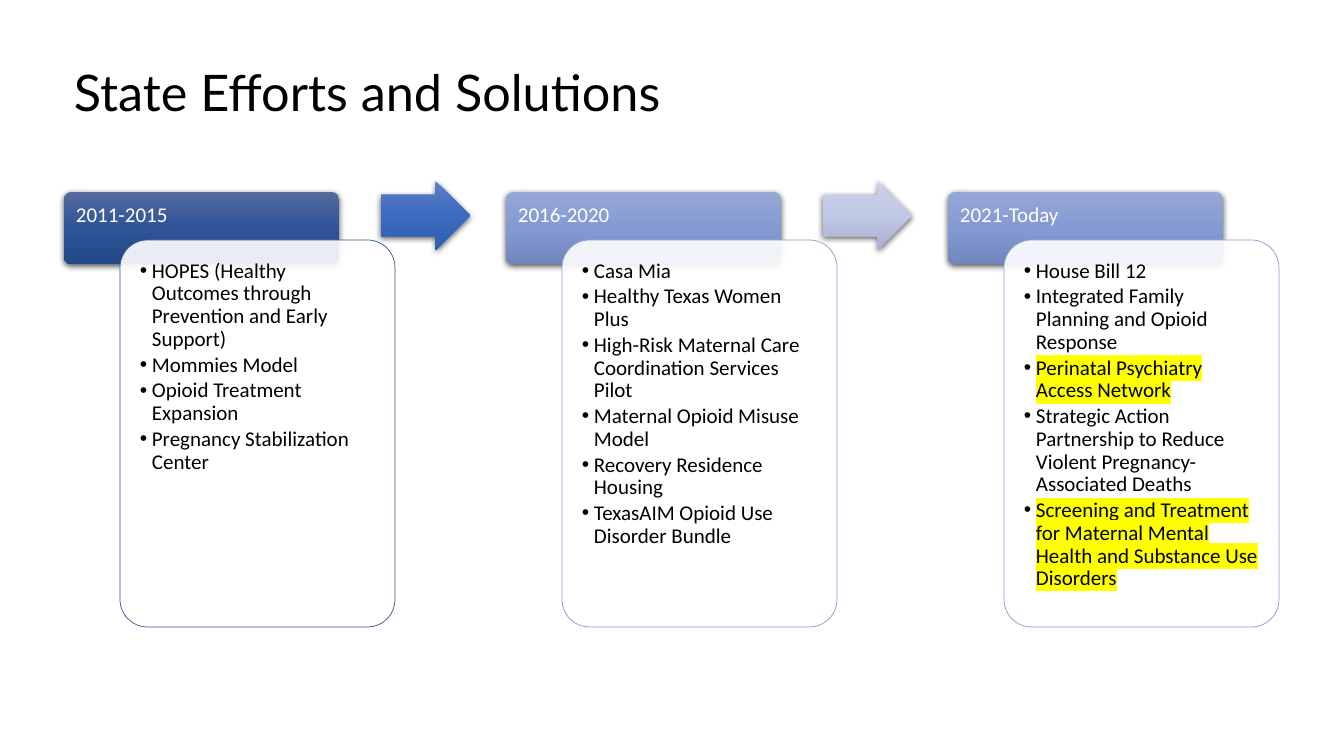
from dataclasses import dataclass

from lxml.etree import SubElement
from pptx import Presentation
from pptx.dml.color import RGBColor
from pptx.enum.shapes import MSO_SHAPE as Shape
from pptx.enum.text import MSO_ANCHOR as Anchor
from pptx.oxml.ns import qn
from pptx.util import Pt

TITLE = "State Efforts and Solutions"
# Each period: heading, then (programme, highlighted) pairs.
PERIODS = [
    ("2011-2015", [
        ("HOPES (Healthy Outcomes through Prevention and Early Support)", False),
        ("Mommies Model", False),
        ("Opioid Treatment Expansion", False),
        ("Pregnancy Stabilization Center", False),
    ]),
    ("2016-2020", [
        ("Casa Mia", False),
        ("Healthy Texas Women Plus", False),
        ("High-Risk Maternal Care Coordination Services Pilot", False),
        ("Maternal Opioid Misuse Model", False),
        ("Recovery Residence Housing", False),
        ("TexasAIM Opioid Use Disorder Bundle", False),
    ]),
    ("2021-Today", [
        ("House Bill 12", False),
        ("Integrated Family Planning and Opioid Response", False),
        ("Perinatal Psychiatry Access Network", True),
        ("Strategic Action Partnership to Reduce Violent Pregnancy-Associated Deaths", False),
        ("Screening and Treatment for Maternal Mental Health and Substance Use Disorders", True),
    ]),
]


@dataclass(frozen=True)
class Theme:
    title_font: str = "Lato"
    body_font: str = "Calibri"
    title_size: int = 36
    body_size: int = 15
    text: str = "000000"
    white: str = "FFFFFF"
    highlight: str = "FFFF00"
    shadow: str = "000000"
    light_header: tuple = ("95A7D4", "849AD2", "7187BE")
    dark_header: tuple = ("566B9E", "2E5396", "244989")
    arrows: tuple = (("5E7EC4", "3B6BC1", "2F5EB1"), ("CAD2E9", "BFC9E6", "A7B1CF"))
    dark_outline: str = "325491"
    light_outline: str = "879BCE"


THEME = Theme()
EMU_PER_PX = 9071.43
SLIDE_SIZE = (1344, 756)
TITLE_BOX = (64, 48, 1218, 95)
LEFT, PITCH, WIDTH = 64, 442, 275
HEADER_TOP, HEADER_HEIGHT, HEADER_TEXT_HEIGHT = 192, 72, 47
CARD_SHIFT, CARD_TOP, CARD_HEIGHT, CARD_PAD = 56, 240, 387, 8
ARROW_SHIFT, ARROW_TOP, ARROW_WIDTH, ARROW_HEIGHT = 317, 181, 89, 69
INSET = 12


def px(value):
    return round(value * EMU_PER_PX)


def add_color(parent, color, alpha=None):
    node = SubElement(parent, qn("a:srgbClr"), val=color)
    if alpha is not None:
        SubElement(node, qn("a:alpha"), val=str(alpha * 1000))


def add_text(slide, box, items, *, font, size, color, insets, anchor=Anchor.TOP,
             bullet=False, space_after=0):
    """Add a text box; items are (text, highlighted) pairs, one per paragraph."""
    frame = slide.shapes.add_textbox(*map(px, box)).text_frame
    frame.word_wrap = True
    frame.vertical_anchor = anchor
    (frame.margin_left, frame.margin_top,
     frame.margin_right, frame.margin_bottom) = map(px, insets)
    for index, (text, highlighted) in enumerate(items):
        paragraph = frame.paragraphs[0] if index == 0 else frame.add_paragraph()
        paragraph.line_spacing = 0.9
        paragraph.space_after = Pt(space_after)
        if bullet:
            properties = paragraph._p.get_or_add_pPr()
            properties.set("marL", str(px(INSET)))
            properties.set("indent", str(-px(INSET)))
            SubElement(properties, qn("a:buFont"), typeface="Arial")
            SubElement(properties, qn("a:buChar"), char="•")
        run = paragraph.add_run()
        run.text = text
        run.font.name = font
        run.font.size = Pt(size)
        run.font.color.rgb = RGBColor.from_string(color)
        if highlighted:
            run_properties = run._r.get_or_add_rPr()
            mark = SubElement(run_properties, qn("a:highlight"))
            add_color(mark, THEME.highlight)
            run_properties.find(qn("a:solidFill")).addnext(mark)


def add_shape(slide, kind, box, adjustments):
    shape = slide.shapes.add_shape(kind, *map(px, box))
    shape.shadow.inherit = False
    for index, value in enumerate(adjustments):
        shape.adjustments[index] = value
    return shape


def add_glossy_shape(slide, kind, box, adjustments, colors):
    """Add a borderless shape with a downward three-colour gradient and a shadow."""
    shape = add_shape(slide, kind, box, adjustments)
    shape.line.fill.background()
    shape.fill.gradient()
    shape.fill.gradient_angle = 270
    properties = shape._element.spPr
    stops = properties.find(qn("a:gradFill")).find(qn("a:gsLst"))
    for stop in list(stops):
        stops.remove(stop)
    for position, color in zip((0, 50000, 100000), colors):
        add_color(SubElement(stops, qn("a:gs"), pos=str(position)), color)
    shadow = SubElement(properties.find(qn("a:effectLst")), qn("a:outerShdw"),
                        blurRad=str(Pt(4.5)), dist=str(Pt(1.5)), dir="5400000",
                        algn="ctr", rotWithShape="0")
    add_color(shadow, THEME.shadow, alpha=63)


def add_card(slide, box, outline):
    card = add_shape(slide, Shape.ROUNDED_RECTANGLE, box, [0.1])
    card.fill.solid()
    card.fill.fore_color.rgb = RGBColor.from_string(THEME.white)
    color = card._element.spPr.find(qn("a:solidFill"))[0]
    SubElement(color, qn("a:alpha"), val="90000")
    card.line.color.rgb = RGBColor.from_string(outline)
    card.line.width = Pt(0.5)


def add_period(slide, index, heading, programmes):
    left = LEFT + index * PITCH
    first = index == 0
    add_glossy_shape(slide, Shape.ROUNDED_RECTANGLE,
                     (left, HEADER_TOP, WIDTH, HEADER_HEIGHT), [0.1],
                     THEME.dark_header if first else THEME.light_header)
    add_text(slide, (left, HEADER_TOP, WIDTH, HEADER_TEXT_HEIGHT), [(heading, False)],
             font=THEME.body_font, size=THEME.body_size, color=THEME.white,
             insets=(INSET, INSET, INSET, INSET // 2))
    card_left = left + CARD_SHIFT
    add_card(slide, (card_left, CARD_TOP, WIDTH, CARD_HEIGHT),
             THEME.dark_outline if first else THEME.light_outline)
    add_text(slide, (card_left + CARD_PAD, CARD_TOP + CARD_PAD,
                     WIDTH - 2 * CARD_PAD, CARD_HEIGHT - 2 * CARD_PAD), programmes,
             font=THEME.body_font, size=THEME.body_size, color=THEME.text,
             insets=(INSET,) * 4, bullet=True, space_after=2.25)
    if index < len(THEME.arrows):
        add_glossy_shape(slide, Shape.RIGHT_ARROW,
                         (left + ARROW_SHIFT, ARROW_TOP, ARROW_WIDTH, ARROW_HEIGHT),
                         [0.6, 0.5], THEME.arrows[index])


def main():
    presentation = Presentation()
    presentation.slide_width, presentation.slide_height = map(px, SLIDE_SIZE)
    slide = presentation.slides.add_slide(presentation.slide_layouts[6])
    add_text(slide, TITLE_BOX, [(TITLE, False)], font=THEME.title_font,
             size=THEME.title_size, color=THEME.text, insets=(10, 5, 10, 5),
             anchor=Anchor.MIDDLE)
    for index, (heading, programmes) in enumerate(PERIODS):
        add_period(slide, index, heading, programmes)
    presentation.save("out.pptx")


if __name__ == "__main__":
    main()
